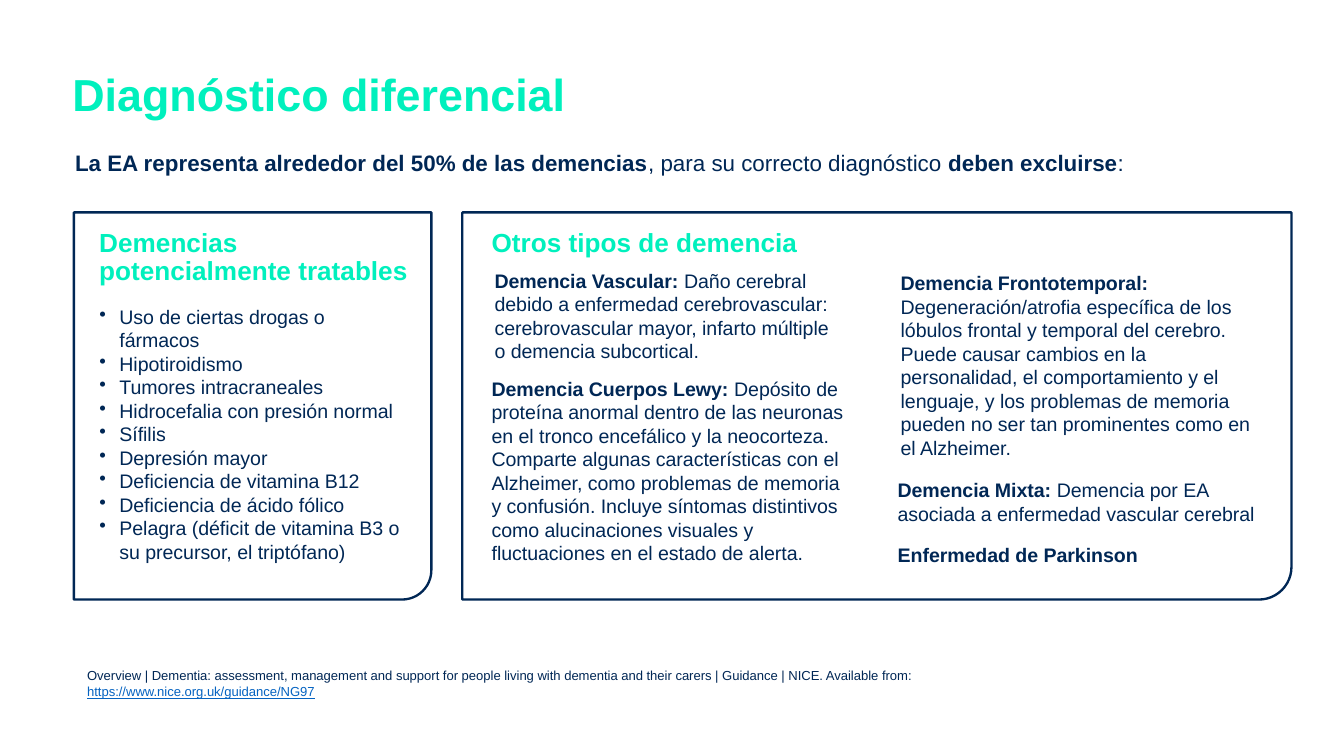
from pptx import Presentation
from pptx.dml.color import RGBColor
from pptx.enum import shapes
from pptx.oxml.xmlchemy import OxmlElement
from pptx.util import Pt

NAVY = RGBColor(0x00, 0x27, 0x55)
MINT = RGBColor(0x00, 0xF0, 0xBD)
LINK = RGBColor(0x05, 0x63, 0xC1)
WHITE = RGBColor(0xFF, 0xFF, 0xFF)

deck = Presentation()
deck.slide_width, deck.slide_height = Pt(720), Pt(405)
slide = deck.slides.add_slide(deck.slide_layouts[6])


def add_run(paragraph, words, size, color=NAVY, bold=False):
    run = paragraph.add_run()
    run.text = words
    run.font.name = "Arial"
    run.font.size = Pt(size)
    run.font.bold = bold
    run.font.color.rgb = color
    return run


def add_text(left, top, width, height):
    frame = slide.shapes.add_textbox(Pt(left), Pt(top), Pt(width), Pt(height)).text_frame
    frame.word_wrap = True
    return frame


# Title and lead sentence
title = add_text(31.7, 32.4, 561, 36).paragraphs[0]
add_run(title, "Diagnóstico diferencial", 24, MINT, True)

lead = add_text(33.1, 76.3, 675, 21.6).paragraphs[0]
add_run(lead, "La EA representa alrededor del 50% de las demencias", 12, bold=True)
add_run(lead, ", para su correcto diagnóstico ", 12)
add_run(lead, "deben excluirse", 12, bold=True)
add_run(lead, ":", 12)

# Two panels, each with the rounded corner at bottom right, and their headings
panels = [
    (39.6, 191.5, 0.082, 46.1, 38.2, "Demencias potencialmente tratables"),
    (247.7, 444.2, 0.084, 256.3, 22.3, "Otros tipos de demencia"),
]
for left, width, corner, heading_left, heading_height, words in panels:
    panel = slide.shapes.add_shape(
        shapes.MSO_SHAPE.ROUND_1_RECTANGLE, Pt(left), Pt(113.8), Pt(width), Pt(207.4))
    panel.adjustments[0] = corner
    panel.shadow.inherit = False
    panel.fill.solid()
    panel.fill.fore_color.rgb = WHITE
    panel.line.color.rgb = NAVY
    panel.line.width = Pt(1.25)
    panel._element.spPr.xfrm.set("flipV", "1")

    heading = add_text(heading_left, 119.5, 182.2, heading_height).paragraphs[0]
    heading.line_spacing = 0.9
    add_run(heading, words, 14, MINT, True)

# Treatable causes
causes = [
    "Uso de ciertas drogas o fármacos",
    "Hipotiroidismo",
    "Tumores intracraneales",
    "Hidrocefalia con presión normal",
    "Sífilis",
    "Depresión mayor",
    "Deficiencia de vitamina B12",
    "Deficiencia de ácido fólico",
    "Pelagra (déficit de vitamina B3 o su precursor, el triptófano)",
]
cause_list = add_text(46.1, 159.8, 176.4, 146.9)
for number, cause in enumerate(causes):
    item = cause_list.add_paragraph() if number else cause_list.paragraphs[0]
    properties = item._p.get_or_add_pPr()
    properties.set("marL", str(Pt(10.8)))
    properties.set("indent", str(-Pt(10.8)))
    bullet = OxmlElement("a:buChar")
    bullet.set("char", "•")
    properties.append(bullet)
    add_run(item, cause, 10.5)

# Other dementias: left, top, width, height, indent, name, description
dementias = [
    (256.3, 140.4, 197.3, 58.3, 1.6, "Demencia Vascular: ",
     "Daño cerebral debido a enfermedad cerebrovascular: cerebrovascular mayor, "
     "infarto múltiple o demencia subcortical."),
    (256.3, 198.2, 205.9, 108.7, 0, "Demencia Cuerpos Lewy: ",
     "Depósito de proteína anormal dentro de las neuronas en el tronco encefálico y la "
     "neocorteza. Comparte algunas características con el Alzheimer, como problemas de "
     "memoria y confusión. Incluye síntomas distintivos como alucinaciones visuales y "
     "fluctuaciones en el estado de alerta."),
    (473.8, 141.8, 209.5, 108.7, 1.6, "Demencia Frontotemporal: ",
     "Degeneración/atrofia específica de los lóbulos frontal y temporal del cerebro. "
     "Puede causar cambios en la personalidad, el comportamiento y el lenguaje, y los "
     "problemas de memoria pueden no ser tan prominentes como en el Alzheimer."),
    (473.8, 252.7, 216, 32.4, 0, "Demencia Mixta: ",
     "Demencia por EA asociada a enfermedad vascular cerebral"),
    (473.8, 287.3, 187.9, 20.2, 0, "Enfermedad de Parkinson", ""),
]
for left, top, width, height, indent, name, description in dementias:
    entry = add_text(left, top, width, height).paragraphs[0]
    entry._p.get_or_add_pPr().set("marL", str(Pt(indent)))
    add_run(entry, name, 10.5, bold=True)
    if description:
        add_run(entry, description, 10.5)

# Reference
reference = add_text(39.6, 354.2, 531.4, 24.5).paragraphs[0]
add_run(reference, "Overview | Dementia: assessment, management and support for people living "
        "with dementia and their carers | Guidance | NICE. Available from: ", 7)
address = add_run(reference, "https://www.nice.org.uk/guidance/NG97", 7, LINK)
address.font.underline = True

deck.save("out.pptx")
